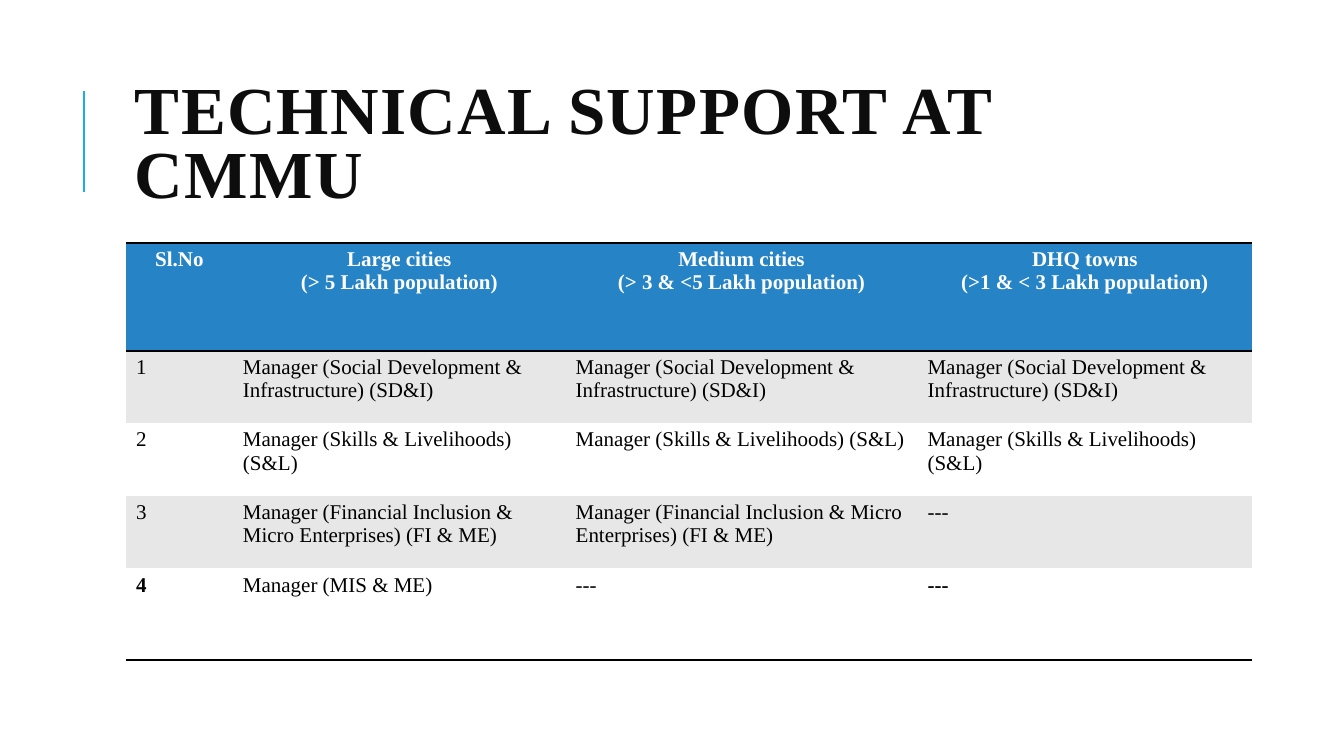
from dataclasses import dataclass

from lxml.etree import SubElement
from pptx import Presentation
from pptx.dml.color import RGBColor
from pptx.enum.shapes import MSO_CONNECTOR
from pptx.enum.text import MSO_ANCHOR, PP_ALIGN
from pptx.oxml.ns import qn
from pptx.util import Emu, Pt

PX = 9144
NO_GRID = "{2D5ABB26-0587-4C30-8999-92F81FD0307C}"


@dataclass(frozen=True)
class Theme:
    """Colours, font and type sizes of the slide."""
    font: str = "Times New Roman"
    accent: str = "1CADE4"
    title: str = "0D0D0D"
    header: str = "2683C6"
    band: str = "E7E7E7"
    white: str = "FFFFFF"
    black: str = "000000"
    title_size: int = 48
    table_size: int = 15


T = Theme()

ROWS = [
    ["Sl.No", "Large cities\n(> 5 Lakh population)",
     "Medium cities\n(> 3 & <5 Lakh population)",
     "DHQ towns\n(>1 & < 3 Lakh population)"],
    ["1"] + ["Manager (Social Development & Infrastructure) (SD&I)"] * 3,
    ["2"] + ["Manager (Skills & Livelihoods) (S&L)"] * 3,
    ["3"] + ["Manager (Financial Inclusion & Micro Enterprises) (FI & ME)"] * 2 + ["---"],
    ["4", "Manager (MIS & ME)", "---", "---"],
]
COL_WIDTHS = [106, 330, 349, 332]
ROW_HEIGHTS = [107, 72, 72, 72, 91]
BOLD_CELLS = {(4, 0), (4, 3)}


def px(n):
    """Turn px into EMU."""
    return Emu(n * PX)


def write(tf, text, size, color, bold=False, align=PP_ALIGN.LEFT, line=None, spacing=None):
    """Fill a text frame, one paragraph for each line of text."""
    for i, words in enumerate(text.split("\n")):
        p = tf.add_paragraph() if i else tf.paragraphs[0]
        p.alignment = align
        p.line_spacing = line
        r = p.add_run()
        r.text = words
        r.font.name, r.font.size, r.font.bold = T.font, Pt(size), bold
        r.font.color.rgb = RGBColor.from_string(color)
        if spacing:
            r.font._element.set("spc", str(spacing))


def border(cell, sides):
    """Rule the given sides of a cell in black."""
    tcPr = cell._tc.get_or_add_tcPr()
    for side in sides:
        ln = SubElement(tcPr, qn(f"a:ln{side}"), w=str(Pt(2)))
        fill = SubElement(ln, qn("a:solidFill"))
        SubElement(fill, qn("a:srgbClr"), val=T.black)


def add_title(s, x, y, w, h):
    """Place the heading with its accent rule on the left."""
    rule_x = px(x - 41)
    rule = s.shapes.add_connector(MSO_CONNECTOR.STRAIGHT, rule_x, px(y + 126), rule_x, px(y + 26))
    rule.line.color.rgb = RGBColor.from_string(T.accent)
    rule.line.width = Pt(1.5)
    SubElement(rule._element.spPr, qn("a:effectLst"))
    tf = s.shapes.add_textbox(px(x), px(y), px(w), px(h)).text_frame
    tf.word_wrap = True
    tf.vertical_anchor = MSO_ANCHOR.MIDDLE
    write(tf, "TECHNICAL SUPPORT AT CMMU", T.title_size, T.title, bold=True, line=0.8, spacing=100)


def add_staff_table(s, x, y):
    """Place the table of managers by size of city."""
    frame = s.shapes.add_table(len(ROWS), len(COL_WIDTHS), px(x), px(y),
                               px(sum(COL_WIDTHS)), px(sum(ROW_HEIGHTS)))
    table = frame.table
    table.first_row = table.horz_banding = False
    for style in frame._element.iter(qn("a:tableStyleId")):
        style.text = NO_GRID
    for col, width in zip(table.columns, COL_WIDTHS):
        col.width = px(width)
    for i, (row, height) in enumerate(zip(table.rows, ROW_HEIGHTS)):
        row.height = px(height)
        head = i == 0
        sides = "TB" if head else "B" if i == len(ROWS) - 1 else ""
        back = T.header if head else T.band if i % 2 else T.white
        for j, cell in enumerate(row.cells):
            border(cell, sides)
            cell.fill.solid()
            cell.fill.fore_color.rgb = RGBColor.from_string(back)
            write(cell.text_frame, ROWS[i][j], T.table_size,
                  T.white if head else T.black,
                  bold=head or (i, j) in BOLD_CELLS,
                  align=PP_ALIGN.CENTER if head else PP_ALIGN.LEFT)


def main():
    """Build and save the slide."""
    prs = Presentation()
    prs.slide_width, prs.slide_height = px(1333), px(750)
    s = prs.slides.add_slide(prs.slide_layouts[6])
    add_title(s, 124, 64, 1063, 164)
    add_staff_table(s, 125, 241)
    prs.save("out.pptx")


if __name__ == "__main__":
    main()
